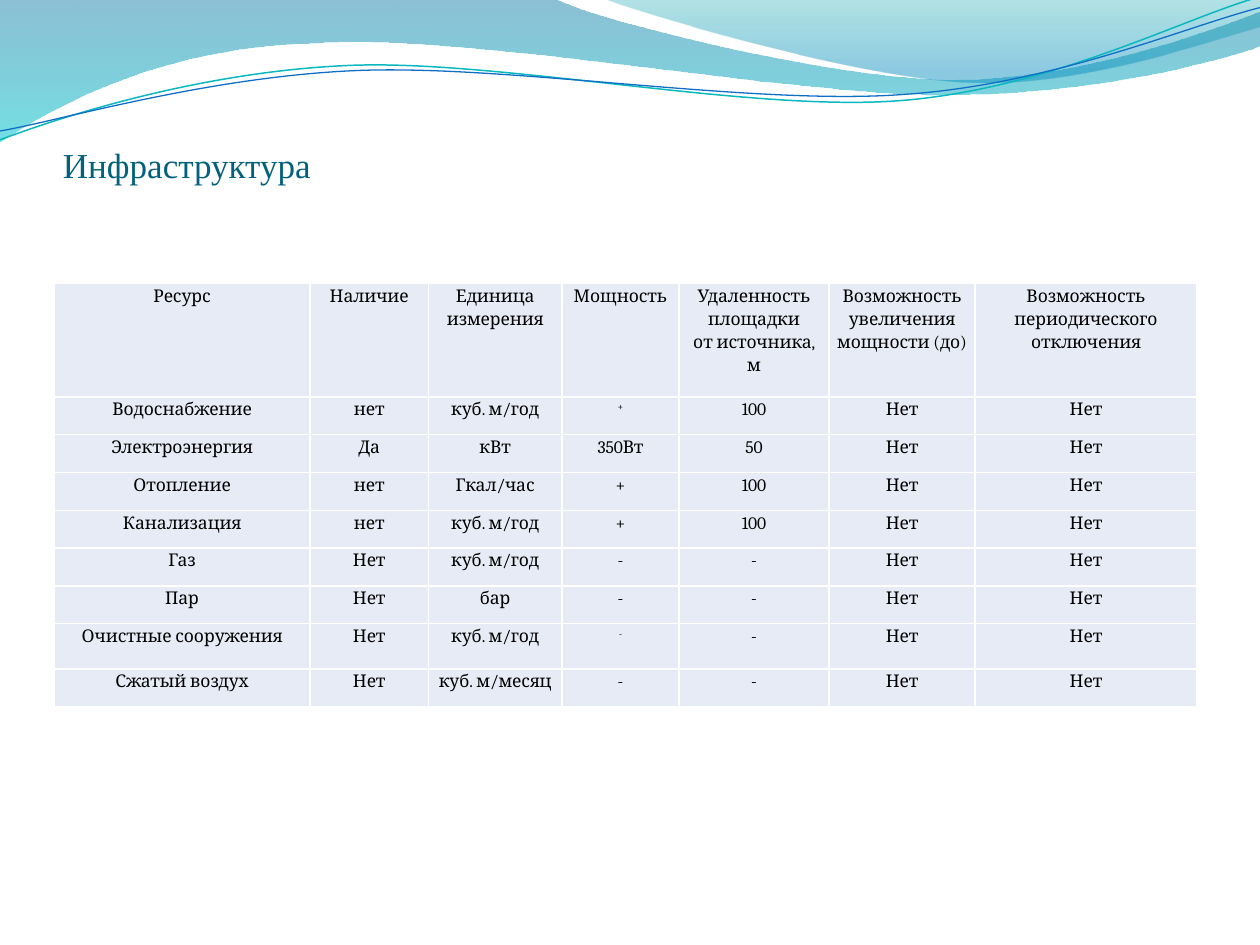
import math
from dataclasses import dataclass
from typing import Any, Optional

import pptx
import pptx.dml.color
import pptx.enum.text
import pptx.oxml
import pptx.oxml.ns
import pptx.util

ALIGN = pptx.enum.text.PP_ALIGN
ANCHOR = pptx.enum.text.MSO_ANCHOR
Point = tuple[float, float]


@dataclass(frozen=True)
class Theme:
    title: str = "04617B"
    text: str = "000000"
    cell: str = "E7EBF5"
    border: str = "FFFFFF"
    title_font: str = "Times New Roman"
    table_font: str = "Cambria"
    title_size: float = 20
    table_size: float = 10
    border_width: float = 1
    line_spacing: float = 1.15


@dataclass(frozen=True)
class Stop:
    position: int
    color: str
    opacity: int


@dataclass(frozen=True)
class Wave:
    """Each segment is one end point, or two control points and an end point."""
    box: tuple[float, float, float, float]
    start: Point
    segments: tuple[tuple[Point, ...], ...]
    stops: tuple[Stop, ...] = ()
    line_color: Optional[str] = None
    line_width: float = 0
    rotation: float = 0


THEME = Theme()
COLUMNS, ROWS = 10, 7.5
UNIT = pptx.util.Inches(1)  # one grid column or row

WAVES = [
    Wave((-0.01, -0.01, 10.02, 1.14), (0, 0), (
        ((4.4, -0.01),),
        ((4.76, 0.17), (6.64, 0.63), (7.58, 0.63)),
        ((8.53, 0.63), (9.58, 0.26), (10, 0.09)),
        ((10.01, 0.36),),
        ((9.83, 0.44), (8.7, 0.76), (7.46, 0.75)),
        ((6.22, 0.75), (3.82, 0.28), (2.57, 0.34)),
        ((1.29, 0.36), (0.46, 0.83), (-0.01, 1.13)),
        ((0, 0),),
    ), stops=(Stop(0, "0074A1", 45), Stop(100, "00C6CF", 55))),
    Wave((4.79, -0.01, 5.21, 0.7), (4.79, -0.01), (
        ((5.09, 0.11), (6.82, 0.62), (7.69, 0.65)),
        ((8.56, 0.69), (9.61, 0.32), (10, 0.21)),
        ((10, 0),),
        ((4.79, -0.01),),
    ), stops=(Stop(0, "00A1A9", 30), Stop(80, "008BBF", 45))),
    Wave((-0.02, 0.22, 10.02, 0.71), (0, 1.11), (
        ((0.48, 0.93), (1.58, 0.57), (2.77, 0.52)),
        ((3.95, 0.47), (5.93, 0.89), (7.13, 0.8)),
        ((8.33, 0.71), (9.38, 0.15), (9.98, -0.02)),
    ), line_color="0AB8BF", line_width=0.85, rotation=357.3),
    Wave((-0.02, 0.3, 10.03, 0.58), (0, 1.04), (
        ((0.47, 0.96), (1.64, 0.61), (2.83, 0.56)),
        ((4.03, 0.51), (5.97, 0.84), (7.17, 0.75)),
        ((8.36, 0.67), (9.41, 0.21), (10, 0.06)),
    ), line_color="0F6FC6", line_width=0.75, rotation=357.3),
]

COLUMN_WIDTHS = [2.03, 0.94, 1.06, 0.93, 1.19, 1.16, 1.76]
ROW_HEIGHTS = [0.9] + [0.3] * 6 + [0.36, 0.3]
HEADER = [
    "Ресурс", "Наличие", "Единица\nизмерения", "Мощность",
    "Удаленность\nплощадки\nот источника, м",
    "Возможность\nувеличения\nмощности (до)",
    "Возможность\nпериодического\nотключения",
]
RESOURCES = [
    ["Водоснабжение", "нет", "куб. м/год", "+", "100"],
    ["Электроэнергия", "Да", "кВт", "350Вт", "50"],
    ["Отопление", "нет", "Гкал/час", "+", "100"],
    ["Канализация", "нет", "куб. м/год", "+", "100"],
    ["Газ", "Нет", "куб. м/год", "-", "-"],
    ["Пар", "Нет", "бар", "-", "-"],
    ["Очистные сооружения", "Нет", "куб. м/год", "-", "-"],
    ["Сжатый воздух", "Нет", "куб. м/месяц", "-", "-"],
]
CELLS = [HEADER] + [row + ["Нет", "Нет"] for row in RESOURCES]
RAISED = {(1, 3), (7, 3)}  # superscript power values


def grid(n: float) -> int:
    return round(n * UNIT)


def rgb(color: str) -> pptx.dml.color.RGBColor:
    return pptx.dml.color.RGBColor.from_string(color)


def xml(tag: str, attributes: str, content: str) -> Any:
    return pptx.oxml.parse_xml(
        f'<a:{tag} {pptx.oxml.ns.nsdecls("a")} {attributes}>{content}</a:{tag}>')


def add_text(tf: Any, text: str, *, font: str, size: float, color: str,
             align: Any = ALIGN.LEFT, spacing: float = 1, raised: bool = False) -> None:
    for i, line in enumerate(text.split("\n")):
        p = tf.add_paragraph() if i else tf.paragraphs[0]
        p.alignment, p.line_spacing = align, spacing
        r = p.add_run()
        r.text = line
        r.font.name, r.font.size = font, pptx.util.Pt(size)
        r.font.color.rgb = rgb(color)
        if raised:
            r.font._element.set("baseline", "30000")


def point_xml(wave: Wave, point: Point) -> str:
    """Turn a slide point back into the frame of the unrotated box."""
    left, top, width, height = wave.box
    dx, dy = point[0] - left - width / 2, point[1] - top - height / 2
    a = math.radians(-wave.rotation)
    x = dx * math.cos(a) - dy * math.sin(a) + width / 2
    y = dx * math.sin(a) + dy * math.cos(a) + height / 2
    return f'<a:pt x="{grid(x)}" y="{grid(y)}"/>'


def set_curves(sp: Any, wave: Wave) -> None:
    outline = next(sp._element.iter(pptx.oxml.ns.qn("a:path")))
    for child in list(outline):
        outline.remove(child)
    outline.append(xml("moveTo", "", point_xml(wave, wave.start)))
    for segment in wave.segments:
        tag = "lnTo" if len(segment) == 1 else "cubicBezTo"
        outline.append(xml(tag, "", "".join(point_xml(wave, pt) for pt in segment)))
    if wave.stops:
        outline.append(xml("close", "", ""))


def set_gradient(sp: Any, stops: tuple[Stop, ...]) -> None:
    sp.fill.gradient()
    old = sp._element.spPr.find(pptx.oxml.ns.qn("a:gradFill"))
    marks = "".join(
        f'<a:gs pos="{s.position * 1000}"><a:srgbClr val="{s.color}">'
        f'<a:alpha val="{s.opacity * 1000}"/></a:srgbClr></a:gs>' for s in stops)
    old.getparent().replace(old, xml(
        "gradFill", 'rotWithShape="1"',
        f'<a:gsLst>{marks}</a:gsLst><a:lin ang="5400000" scaled="0"/>'))


def add_wave(s: Any, wave: Wave) -> None:
    left, top, width, height = wave.box
    builder = s.shapes.build_freeform(grid(left), grid(top))
    builder.add_line_segments([(grid(left + width), grid(top + height))], close=False)
    sp = builder.convert_to_shape()
    set_curves(sp, wave)
    sp.rotation = wave.rotation
    sp.shadow.inherit = False
    if wave.stops:
        set_gradient(sp, wave.stops)
        sp.line.fill.background()
    else:
        sp.fill.background()
        sp.line.color.rgb = rgb(wave.line_color)
        sp.line.width = pptx.util.Pt(wave.line_width)


def format_cell(cell: Any) -> None:
    cell.margin_left = cell.margin_right = grid(0.05)
    cell.margin_top = cell.margin_bottom = 0
    tcPr = cell._tc.get_or_add_tcPr()
    for side in "LRTB":
        tcPr.append(xml(f"ln{side}", f'w="{pptx.util.Pt(THEME.border_width)}"',
                        f'<a:solidFill><a:srgbClr val="{THEME.border}"/></a:solidFill>'))
    cell.fill.solid()
    cell.fill.fore_color.rgb = rgb(THEME.cell)


def add_resource_table(s: Any, left: float, top: float) -> None:
    table = s.shapes.add_table(len(CELLS), len(HEADER), grid(left), grid(top),
                               grid(sum(COLUMN_WIDTHS)), grid(sum(ROW_HEIGHTS))).table
    table.first_row = table.horz_banding = False
    for column, width in zip(table.columns, COLUMN_WIDTHS):
        column.width = grid(width)
    for i, (row, height) in enumerate(zip(table.rows, ROW_HEIGHTS)):
        row.height = grid(height)
        for j, cell in enumerate(row.cells):
            format_cell(cell)
            add_text(cell.text_frame, CELLS[i][j], font=THEME.table_font,
                     size=THEME.table_size, color=THEME.text, align=ALIGN.CENTER,
                     spacing=THEME.line_spacing, raised=(i, j) in RAISED)


def add_title(s: Any, text: str) -> None:
    tf = s.shapes.add_textbox(grid(0.5), grid(0.77), grid(COLUMNS - 1), grid(0.7)).text_frame
    tf.word_wrap, tf.vertical_anchor = True, ANCHOR.BOTTOM
    tf.margin_left = tf.margin_right = tf.margin_bottom = 0
    tf.margin_top = grid(0.05)
    add_text(tf, text, font=THEME.title_font, size=THEME.title_size, color=THEME.title)


def main() -> None:
    prs = pptx.Presentation()
    prs.slide_width, prs.slide_height = grid(COLUMNS), grid(ROWS)
    s = prs.slides.add_slide(prs.slide_layouts[6])
    # Wave decoration
    for wave in WAVES:
        add_wave(s, wave)
    # Title and table
    add_title(s, "Инфраструктура")
    add_resource_table(s, 0.43, 2.25)
    prs.save("out.pptx")


if __name__ == "__main__":
    main()
